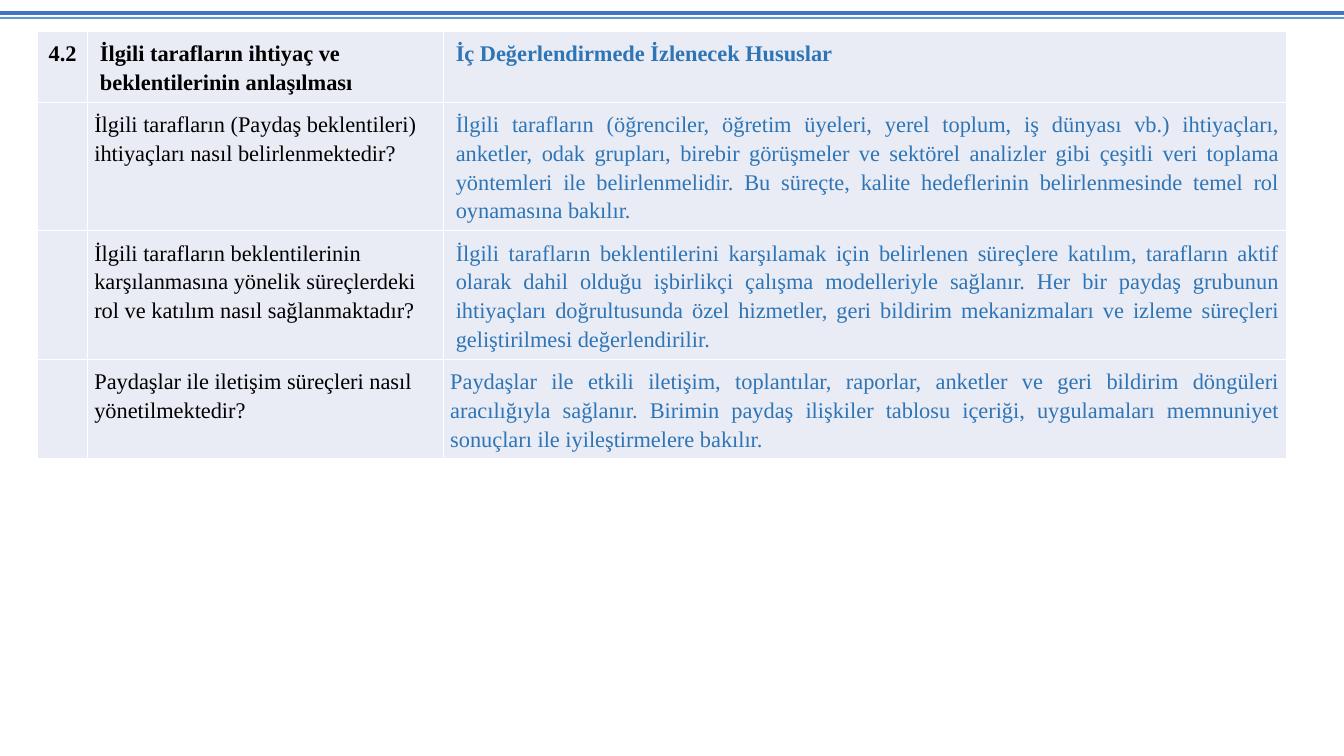
from dataclasses import dataclass

from lxml import etree
from pptx import Presentation
from pptx.dml.color import RGBColor
from pptx.enum import shapes, text
from pptx.oxml import ns
from pptx.util import Pt


@dataclass(frozen=True)
class Theme:
    font: str = "Times New Roman"
    size: float = 16
    line_spacing: float = 1.15
    question: str = "000000"
    guidance: str = "2E75B6"
    cell: str = "E9EBF5"
    border: str = "FFFFFF"
    thick_rule: str = "4472C4"
    thin_rule: str = "5B9BD5"


@dataclass(frozen=True)
class Rule:
    y: float
    color: str
    width: float


@dataclass(frozen=True)
class CellText:
    text: str
    color: str
    align: text.PP_ALIGN = text.PP_ALIGN.LEFT
    indent: float = 0
    bold: bool = False


@dataclass(frozen=True)
class Row:
    lines: int
    cells: tuple[CellText | None, CellText, CellText]


THEME = Theme()
SLIDE_W, SLIDE_H = 960, 540
TABLE_LEFT, TABLE_TOP = 27, 22.1
COLUMNS = (35.4, 254.2, 602.4)
INSET = 5
LINE_HEIGHT = 20.4
INDENT = 4

RULES = (Rule(13, THEME.thin_rule, 1), Rule(9.3, THEME.thick_rule, 2.25))


def question(words: str, **style) -> CellText:
    return CellText(words, THEME.question, **style)


def guidance(words: str, indent: float = INDENT, bold: bool = False) -> CellText:
    return CellText(words, THEME.guidance, text.PP_ALIGN.JUSTIFY, indent, bold)


ROWS = (
    Row(2, (
        question("4.2", align=text.PP_ALIGN.CENTER, bold=True),
        question("İlgili tarafların ihtiyaç ve beklentilerinin anlaşılması",
                 indent=INDENT, bold=True),
        guidance("İç Değerlendirmede İzlenecek Hususlar", bold=True),
    )),
    Row(4, (
        None,
        question("İlgili tarafların (Paydaş beklentileri) ihtiyaçları nasıl "
                 "belirlenmektedir?"),
        guidance("İlgili tarafların (öğrenciler, öğretim üyeleri, yerel toplum, iş "
                 "dünyası vb.) ihtiyaçları, anketler, odak grupları, birebir görüşmeler "
                 "ve sektörel analizler gibi çeşitli veri toplama yöntemleri ile "
                 "belirlenmelidir. Bu süreçte, kalite hedeflerinin belirlenmesinde "
                 "temel rol oynamasına bakılır."),
    )),
    Row(4, (
        None,
        question("İlgili tarafların beklentilerinin karşılanmasına yönelik "
                 "süreçlerdeki rol ve katılım nasıl sağlanmaktadır?"),
        guidance("İlgili tarafların beklentilerini karşılamak için belirlenen "
                 "süreçlere katılım, tarafların aktif olarak dahil olduğu işbirlikçi "
                 "çalışma modelleriyle sağlanır. Her bir paydaş grubunun ihtiyaçları "
                 "doğrultusunda özel hizmetler, geri bildirim mekanizmaları ve izleme "
                 "süreçleri geliştirilmesi değerlendirilir."),
    )),
    Row(3, (
        None,
        question("Paydaşlar ile iletişim süreçleri nasıl yönetilmektedir?"),
        guidance("Paydaşlar ile etkili iletişim, toplantılar, raporlar, anketler ve "
                 "geri bildirim döngüleri aracılığıyla sağlanır. Birimin paydaş "
                 "ilişkiler tablosu içeriği, uygulamaları memnuniyet sonuçları ile "
                 "iyileştirmelere bakılır.", indent=0),
    )),
)


def draw_rule(slide, rule: Rule) -> None:
    line = slide.shapes.add_connector(
        shapes.MSO_CONNECTOR.STRAIGHT, 0, Pt(rule.y), Pt(SLIDE_W), Pt(rule.y))
    line.line.color.rgb = RGBColor.from_string(rule.color)
    line.line.width = Pt(rule.width)
    etree.SubElement(line._element.spPr, ns.qn("a:effectLst"))


def format_cell(cell) -> None:
    cell.margin_left = cell.margin_right = Pt(INSET)
    cell.margin_top = cell.margin_bottom = Pt(INSET)
    tc_pr = cell._tc.get_or_add_tcPr()
    for side in ("lnL", "lnR", "lnT", "lnB"):
        border = etree.SubElement(tc_pr, ns.qn(f"a:{side}"), w=str(Pt(1)))
        fill = etree.SubElement(border, ns.qn("a:solidFill"))
        etree.SubElement(fill, ns.qn("a:srgbClr"), val=THEME.border)
    cell.fill.solid()
    cell.fill.fore_color.rgb = RGBColor.from_string(THEME.cell)


def write_cell(cell, content: CellText) -> None:
    p = cell.text_frame.paragraphs[0]
    p.text = content.text
    p.alignment = content.align
    p.line_spacing = THEME.line_spacing
    p.font.name = THEME.font
    p.font.size = Pt(THEME.size)
    p.font.bold = content.bold
    p.font.color.rgb = RGBColor.from_string(content.color)
    if content.indent:
        p_pr = p._p.get_or_add_pPr()
        p_pr.set("marL", str(Pt(content.indent)))
        p_pr.set("indent", "0")


def draw_table(slide) -> None:
    heights = [row.lines * LINE_HEIGHT + 2 * INSET for row in ROWS]
    table = slide.shapes.add_table(
        len(ROWS), len(COLUMNS), Pt(TABLE_LEFT), Pt(TABLE_TOP),
        Pt(sum(COLUMNS)), Pt(sum(heights))).table
    table.first_row = table.horz_banding = False
    for column, width in zip(table.columns, COLUMNS):
        column.width = Pt(width)
    for table_row, height, row in zip(table.rows, heights, ROWS):
        table_row.height = Pt(height)
        for cell, content in zip(table_row.cells, row.cells):
            format_cell(cell)
            if content:
                write_cell(cell, content)


def main() -> None:
    prs = Presentation()
    prs.slide_width, prs.slide_height = Pt(SLIDE_W), Pt(SLIDE_H)
    slide = prs.slides.add_slide(prs.slide_layouts[6])
    for rule in RULES:
        draw_rule(slide, rule)
    draw_table(slide)
    prs.save("out.pptx")


if __name__ == "__main__":
    main()
